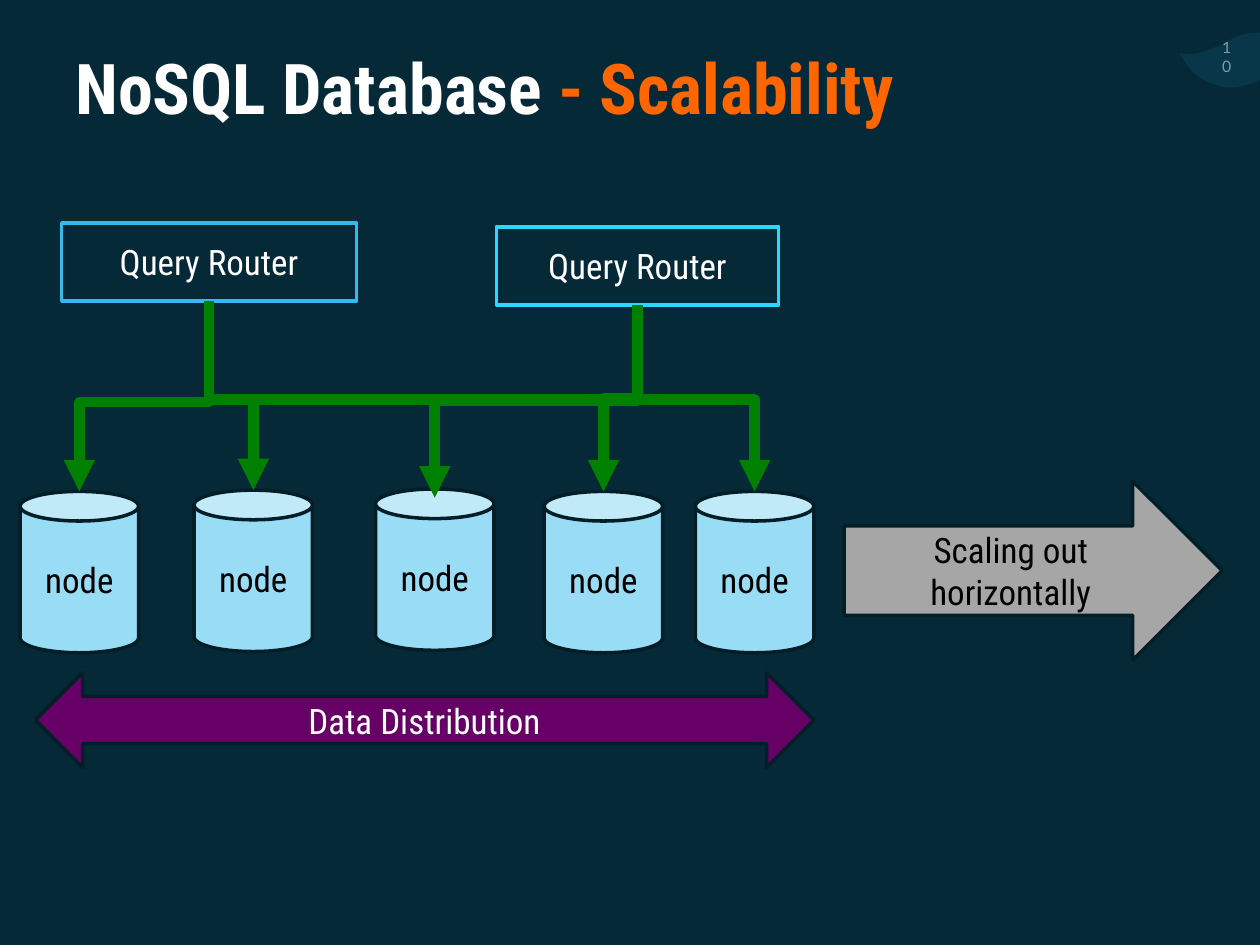
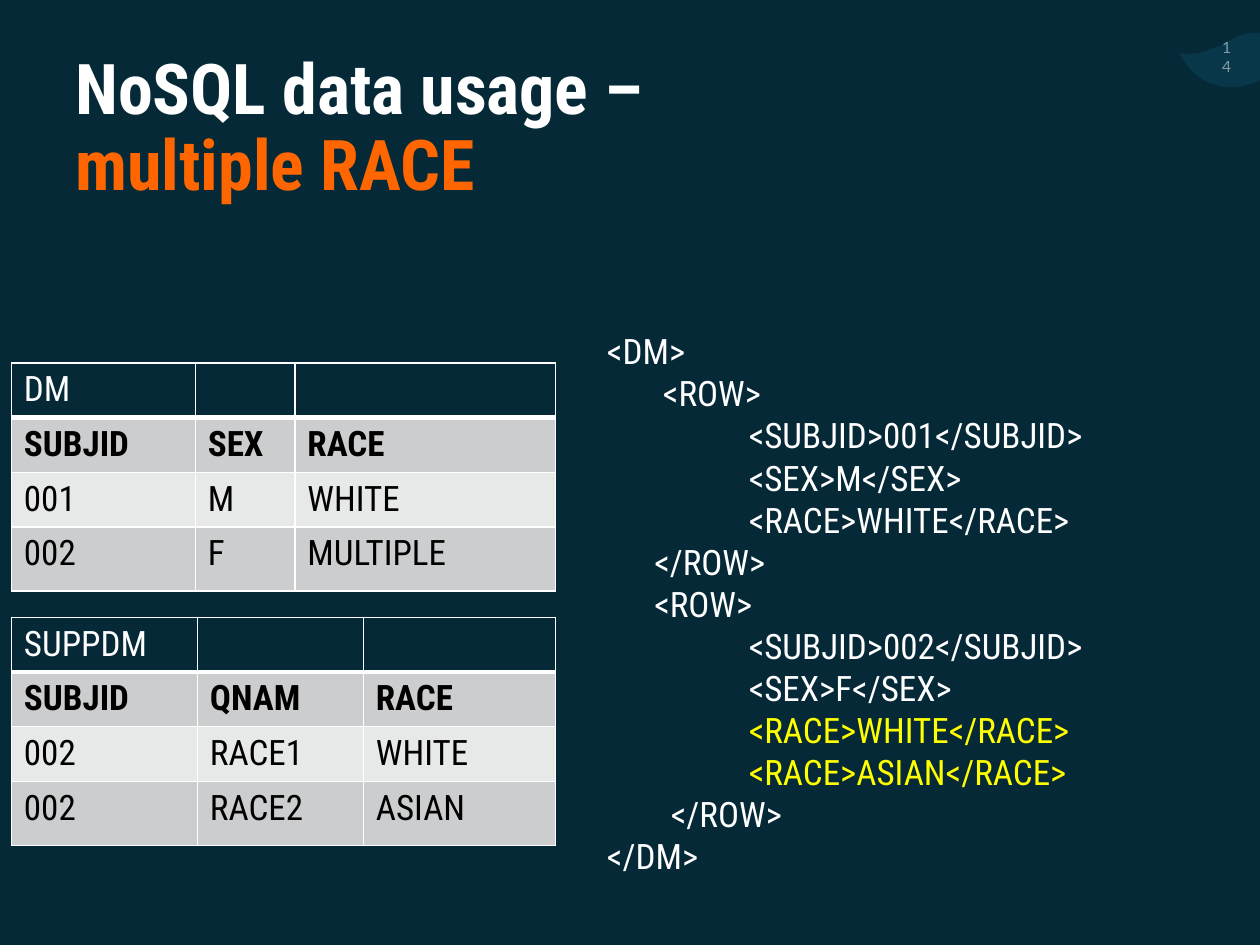
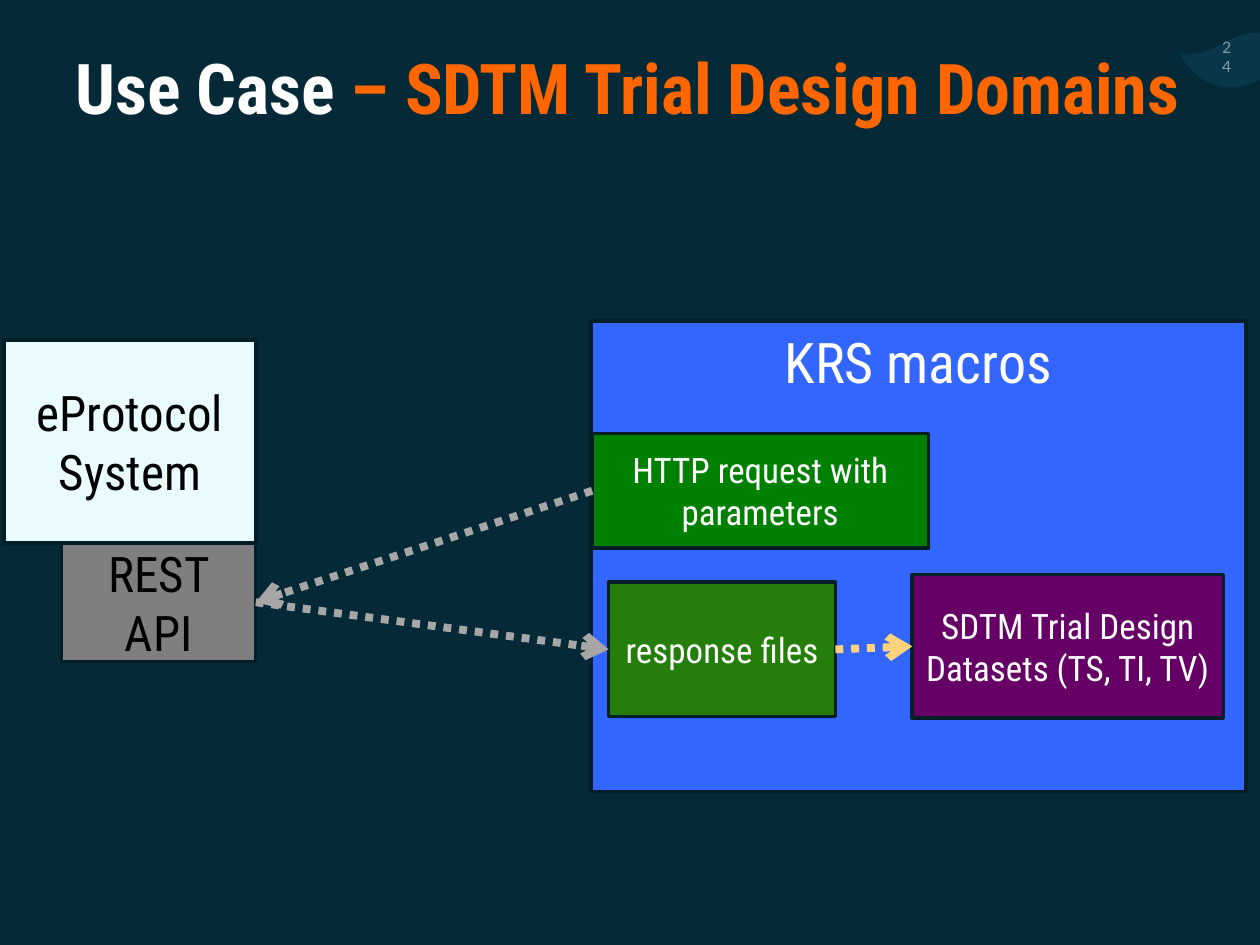
from pptx import Presentation
from pptx.dml.color import RGBColor
from pptx.enum.dml import MSO_LINE
from pptx.enum.shapes import MSO_CONNECTOR as Link, MSO_SHAPE as Preset
from pptx.enum.text import MSO_ANCHOR as Anchor, PP_ALIGN as Align
from pptx.oxml.ns import qn
from pptx.util import Pt
from lxml.etree import SubElement

NAVY, WAVE, EDGE = "052936", "083749", "041E28"
WHITE, BLACK, ORANGE, YELLOW = "FFFFFF", "000000", "FF6600", "FFFF00"
GREEN, PURPLE, GREY = "008000", "660066", "A6A6A6"
TITLE_BOX = (36, 27.4, 648, 90)
NUMBER_BOX = (691.2, 19.4, 22.3, 25.9)
WAVE_BOX = (673.9, 18, 72, 33.1)
WAVE_START = (100, 30)
WAVE_CURVES = [
    ((97, 23), (92, 17), (87, 12)),
    ((82, 7), (76, 3), (69, 2)),
    ((62, 0), (54, 1), (46, 4)),
    ((42, 6), (37, 8), (33, 11)),
    ((27, 13), (22, 15), (17, 17)),
    ((11, 18), (6, 18), (0, 17)),
    ((7, 30), (16, 39), (28, 42)),
    ((38, 46), (48, 45), (61, 40)),
    ((67, 37), (72, 33), (78, 31)),
    ((86, 28), (94, 28), (100, 30)),
]


def rgb(colour):
    return RGBColor.from_string(colour)


def points(values):
    return [Pt(value) for value in values]


def fill_with(target, colour):
    target.fill.solid()
    target.fill.fore_color.rgb = rgb(colour)


def write(frame, text, size=20, colour=WHITE, bold=False, font="Roboto Condensed",
          align=Align.LEFT, spacing=None, indent=0, alpha=None):
    para = frame.add_paragraph() if frame.text else frame.paragraphs[0]
    para.alignment = align
    if spacing:
        para.line_spacing = spacing
    if indent:
        props = para._p.get_or_add_pPr()
        props.set("marL", str(Pt(indent)))
        props.set("indent", "0")
    spans = [(text, colour)] if isinstance(text, str) else text
    for words, shade in spans:
        if words == "\n":
            para.add_line_break()
            continue
        span = para.add_run()
        span.text = words
        span.font.size = Pt(size)
        span.font.name = font
        span.font.bold = bold
        span.font.color.rgb = rgb(shade)
        if alpha:
            tint = span.font.fill._xPr.find(".//" + qn("a:srgbClr"))
            SubElement(tint, qn("a:alpha"), val=str(alpha * 1000))


def text_box(page, box, wrap=True, anchor=Anchor.TOP):
    frame = page.shapes.add_textbox(*points(box)).text_frame
    frame.word_wrap = wrap
    frame.vertical_anchor = anchor
    return frame


def block(page, preset, box, text, fill, edge=EDGE, anchor=Anchor.MIDDLE, **style):
    shape = page.shapes.add_shape(preset, *points(box))
    shape.shadow.inherit = False
    fill_with(shape, fill)
    shape.line.color.rgb = rgb(edge)
    shape.line.width = Pt(2)
    shape.text_frame.vertical_anchor = anchor
    write(shape.text_frame, text, align=Align.CENTER, **style)
    return shape


def finish_arrow(arrow, colour, weight, head):
    arrow.line.color.rgb = rgb(colour)
    arrow.line.width = Pt(weight)
    props = arrow._element.spPr
    SubElement(props.find(qn("a:ln")), qn("a:tailEnd"), type=head)
    SubElement(props, qn("a:effectLst"))


def dotted_arrow(page, start, start_side, end, end_side, colour):
    arrow = page.shapes.add_connector(Link.STRAIGHT, 0, 0, 0, 0)
    arrow.begin_connect(start, start_side)
    arrow.end_connect(end, end_side)
    arrow.line.dash_style = MSO_LINE.ROUND_DOT
    finish_arrow(arrow, colour, 4.5, "arrow")


def drop_arrow(page, start, end, bus):
    (x1, y1), (x2, y2) = start, end
    middle_x, middle_y = (x1 + x2) / 2, (y1 + y2) / 2
    half_drop, half_span = (y2 - y1) / 2, abs(x2 - x1) / 2
    goes_right = x2 > x1
    reach = -half_drop if goes_right else half_drop
    arrow = page.shapes.add_connector(Link.ELBOW, *points((
        middle_x - reach, middle_y - half_span, middle_x + reach, middle_y + half_span)))
    props = arrow._element.spPr
    props.find(qn("a:xfrm")).set("rot", str((270 if goes_right else 90) * 60000))
    guides = props.find(qn("a:prstGeom")).get_or_add_avLst()
    bend = round((bus - y1) / (y2 - y1) * 100000)
    SubElement(guides, qn("a:gd"), name="adj1", fmla=f"val {bend}")
    finish_arrow(arrow, GREEN, 6, "triangle")


def wave(page, box):
    left, top, width, _ = box
    unit = width / 100

    def place(x, y):
        return Pt(left + x * unit), Pt(top + y * unit)

    outline, start = [], WAVE_START
    for curve in WAVE_CURVES:
        corners = (start, *curve)
        for step in range(1, 7):
            t = step / 6
            weights = ((1 - t) ** 3, 3 * t * (1 - t) ** 2, 3 * t * t * (1 - t), t ** 3)
            outline.append(place(*(sum(w * c[axis] for w, c in zip(weights, corners))
                                   for axis in (0, 1))))
        start = curve[-1]
    builder = page.shapes.build_freeform(*place(*WAVE_START), scale=1.0)
    builder.add_line_segments(outline, close=True)
    shape = builder.convert_to_shape()
    shape.shadow.inherit = False
    fill_with(shape, WAVE)
    shape.line.fill.background()


def new_page(deck, number, title):
    page = deck.slides.add_slide(deck.slide_layouts[6])
    fill_with(page.background, NAVY)
    wave(page, WAVE_BOX)
    write(text_box(page, NUMBER_BOX, wrap=False, anchor=Anchor.MIDDLE), str(number),
          size=9, font="Lato", alpha=50)
    write(text_box(page, TITLE_BOX), title, size=40, bold=True, spacing=0.9)
    return page


def cluster(page, box):
    left, top, width, height = box
    node_width, node_height, router_height = 67.7, 92.2, 44.6
    nodes = []
    for x, y in [(0, 153.4), (99.4, 152.7), (203.1, 152), (299.5, 153.4), (385.9, 153.4)]:
        block(page, Preset.CAN, (left + x, top + y, node_width, node_height),
              "node", "98DDF5", colour=BLACK)
        nodes.append((left + x + node_width / 2, top + y))
    routers = []
    for x, y, router_width, edge in [(23.8, 0, 168.5, "31BAEC"), (272.2, 2.2, 161.3, "2CD7FF")]:
        block(page, Preset.RECTANGLE, (left + x, top + y, router_width, router_height),
              "Query Router", NAVY, edge=edge)
        routers.append((left + x + router_width / 2, top + y + router_height))
    for router, node, bus, sink in [(0, 1, 100.8, 0), (0, 0, 102.3, 0), (1, 3, 100.1, 0),
                                    (1, 2, 101.6, 5), (0, 4, 100.8, 0)]:
        x, y = nodes[node]
        drop_arrow(page, routers[router], (x, y + sink), top + bus)
    block(page, Preset.LEFT_RIGHT_ARROW, (left + 8.7, top + height - 54, width - 8.7, 54),
          "Data Distribution", PURPLE)


def data_table(page, box, widths, rows):
    table = page.shapes.add_table(len(rows), len(widths), *points(box)).table
    table.first_row = table.horz_banding = False
    for column, width in zip(table.columns, widths):
        column.width = Pt(width)
    for index, (row, values) in enumerate(zip(table.rows, rows)):
        row.height = Pt(31 if index < len(rows) - 1 else box[3] - 31 * index)
        for cell, value in zip(row.cells, values):
            if index == 0:
                for side, weight in (("L", 1), ("R", 1), ("T", 1), ("B", 3)):
                    line = SubElement(cell._tc.get_or_add_tcPr(), qn(f"a:ln{side}"),
                                      w=str(Pt(weight)))
                    SubElement(SubElement(line, qn("a:solidFill")), qn("a:srgbClr"), val=WHITE)
            fill_with(cell, (NAVY, "CCCDCE", "E7E8E8", "CCCDCE")[index])
            if value:
                write(cell.text_frame, value, bold=index == 1,
                      colour=BLACK if index else WHITE)


def markup(page, box, lines):
    frame = text_box(page, box)
    for indent, text, colour in lines:
        write(frame, text, indent=indent, colour=colour)


def protocol_source(page, box):
    left, top, width, height = box
    system_height = 115.9
    block(page, Preset.RECTANGLE, (left, top, width, system_height),
          "eProtocol System", "E9FBFF", size=28, colour=BLACK)
    return block(page, Preset.RECTANGLE,
                 (left + 33.1, top + system_height, width - 33.1, height - system_height),
                 "REST API", "7F7F7F", size=28, colour=BLACK)


def macros(page, box):
    left, top, _, _ = box
    block(page, Preset.RECTANGLE, box, "KRS macros", "3366FF", size=32, anchor=Anchor.TOP)
    request, response, datasets = [
        block(page, Preset.RECTANGLE, (left + x, top + y, width, height), text, fill)
        for x, y, width, height, text, fill in [
            (0.7, 64.1, 192.2, 65.5, "HTTP request with parameters", GREEN),
            (10.1, 149, 129.6, 77, "response files", "267E0A"),
            (183.6, 144.7, 177.8, 82.1, "SDTM Trial Design Datasets (TS, TI, TV)", PURPLE),
        ]]
    dotted_arrow(page, response, 3, datasets, 1, "FFD37D")
    return request, response


def scalability_slide(deck):
    page = new_page(deck, 10, [("NoSQL Database ", WHITE), ("- Scalability", ORANGE)])
    cluster(page, (11.5, 127.4, 453.6, 311.1))
    block(page, Preset.RIGHT_ARROW, (482.4, 275, 216, 102.2),
          "Scaling out horizontally", GREY, colour=BLACK)


def race_slide(deck):
    page = new_page(deck, 14, [("NoSQL data usage –", WHITE), ("\n", WHITE),
                               ("multiple RACE", ORANGE)])
    data_table(page, (6.5, 207.4, 311, 129.6), (105.1, 56.9, 149), [
        ("DM", "", ""),
        ("SUBJID", "SEX", "RACE"),
        ("001", "M", "WHITE"),
        ("002", "F", "MULTIPLE"),
    ])
    markup(page, (339.8, 185, 357.8, 322.6), [
        (0, "<DM>", WHITE),
        (32, "<ROW>", WHITE),
        (81, "<SUBJID>001</SUBJID>", WHITE),
        (81, "<SEX>M</SEX>", WHITE),
        (81, "<RACE>WHITE</RACE>", WHITE),
        (27, "</ROW>", WHITE),
        (27, "<ROW>", WHITE),
        (81, "<SUBJID>002</SUBJID>", WHITE),
        (81, "<SEX>F</SEX>", WHITE),
        (81, "<RACE>WHITE</RACE>", YELLOW),
        (81, "<RACE>ASIAN</RACE>", YELLOW),
        (36.5, "</ROW>", WHITE),
        (0, "</DM>", WHITE),
    ])
    data_table(page, (6.5, 352.8, 311, 129.6), (106.3, 94.8, 109.9), [
        ("SUPPDM", "", ""),
        ("SUBJID", "QNAM", "RACE"),
        ("002", "RACE1", "WHITE"),
        ("002", "RACE2", "ASIAN"),
    ])


def use_case_slide(deck):
    page = new_page(deck, 24, [("Use Case ", WHITE), ("– SDTM Trial Design Domains", ORANGE)])
    api = protocol_source(page, (2.2, 194.4, 144, 183.6))
    request, response = macros(page, (337.7, 183.6, 374.4, 268.6))
    dotted_arrow(page, request, 1, api, 3, GREY)
    dotted_arrow(page, api, 3, response, 1, GREY)


def main():
    deck = Presentation()
    deck.slide_width, deck.slide_height = Pt(720), Pt(540)
    scalability_slide(deck)
    race_slide(deck)
    use_case_slide(deck)
    deck.save("out.pptx")


if __name__ == "__main__":
    main()
